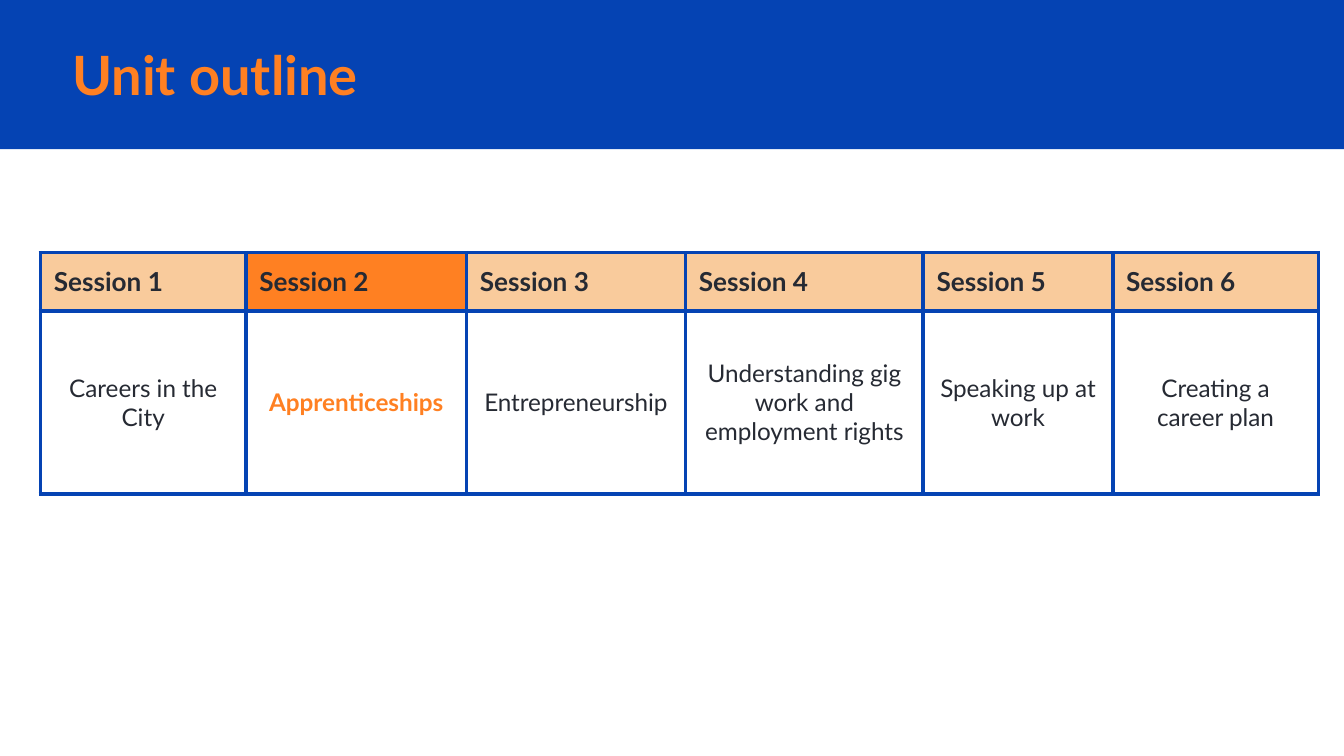
from typing import NamedTuple

from lxml import etree
from pptx import Presentation
from pptx.dml.color import RGBColor
from pptx.enum.shapes import MSO_SHAPE
from pptx.enum.text import MSO_ANCHOR, PP_ALIGN
from pptx.oxml.ns import qn
from pptx.util import Inches, Pt

RECT = MSO_SHAPE.RECTANGLE
TOP, MIDDLE = MSO_ANCHOR.TOP, MSO_ANCHOR.MIDDLE
LEFT, CENTER = PP_ALIGN.LEFT, PP_ALIGN.CENTER
WIDTH = Inches(10)
HEIGHT = WIDTH * 9 // 16
BLUE, ORANGE, PEACH, DARK, WHITE = "0543B3", "FF8022", "F9CB9C", "262A33", "FFFFFF"
INSET = Inches(0.1)
ROW_HEIGHTS = (0.43, 1.36)


class Session(NamedTuple):
    """A session column, its topic and its width in inches."""
    topic: str
    width: float
    current: bool = False


SESSIONS = (
    Session("Careers in the City", 1.53),
    Session("Apprenticeships", 1.64, current=True),
    Session("Entrepreneurship", 1.63),
    Session("Understanding gig work and employment rights", 1.77),
    Session("Speaking up at work", 1.41),
    Session("Creating a career plan", 1.53),
)


def rgb(value: str) -> RGBColor:
    """Turn a hex string into a colour."""
    return RGBColor.from_string(value)


def write(tf, text: str, *, size: float, color: str = DARK, bold: bool = False, align=LEFT) -> None:
    """Put one formatted run in a text frame."""
    tf.word_wrap = True
    p = tf.paragraphs[0]
    p.alignment = align
    r = p.add_run()
    r.text = text
    r.font.name = "Lato"
    r.font.size = Pt(size)
    r.font.bold = bold
    r.font.color.rgb = rgb(color)


def set_insets(box) -> None:
    """Give a cell or a text frame the same inset on every side."""
    box.margin_left = box.margin_right = box.margin_top = box.margin_bottom = INSET


def add_borders(cell, color: str, width: float) -> None:
    """Outline the four sides of a table cell."""
    tc_pr = cell._tc.get_or_add_tcPr()
    for side in ("lnL", "lnR", "lnT", "lnB"):
        ln = etree.SubElement(tc_pr, qn(f"a:{side}"), w=str(Pt(width)))
        fill = etree.SubElement(ln, qn("a:solidFill"))
        etree.SubElement(fill, qn("a:srgbClr"), val=color)


def fill_cell(cell, text: str, fill: str, anchor, **style) -> None:
    """Style one table cell and write its text."""
    set_insets(cell)
    cell.vertical_anchor = anchor
    add_borders(cell, BLUE, 2.25)
    cell.fill.solid()
    cell.fill.fore_color.rgb = rgb(fill)
    write(cell.text_frame, text, **style)


def add_header(s) -> None:
    """Draw the title band and the title."""
    sp = s.shapes.add_shape(RECT, 0, 0, WIDTH, Inches(1.11))
    sp.shadow.inherit = False
    sp.fill.solid()
    sp.fill.fore_color.rgb = rgb(BLUE)
    sp.line.fill.background()
    title = s.shapes.add_textbox(Inches(0.44), Inches(0.21), Inches(9.35), Inches(0.68))
    tf = title.text_frame
    set_insets(tf)
    tf.vertical_anchor = MIDDLE
    write(tf, "Unit outline", size=29, color=ORANGE, bold=True)


def add_outline(s) -> None:
    """Draw the table of sessions."""
    width = Inches(sum(session.width for session in SESSIONS))
    table = s.shapes.add_table(len(ROW_HEIGHTS), len(SESSIONS), Inches(0.3), Inches(1.88),
                               width, Inches(sum(ROW_HEIGHTS))).table
    for row, height in zip(table.rows, ROW_HEIGHTS):
        row.height = Inches(height)
    for col, session in enumerate(SESSIONS):
        table.columns[col].width = Inches(session.width)
        fill_cell(table.cell(0, col), f"Session {col + 1}", ORANGE if session.current else PEACH,
                  TOP, size=14, bold=True)
        fill_cell(table.cell(1, col), session.topic, WHITE, MIDDLE, size=13, align=CENTER,
                  color=ORANGE if session.current else DARK, bold=session.current)


def main() -> None:
    """Build the slide and save it."""
    prs = Presentation()
    prs.slide_width, prs.slide_height = WIDTH, HEIGHT
    s = prs.slides.add_slide(prs.slide_layouts[6])
    add_header(s)
    add_outline(s)
    prs.save("out.pptx")


if __name__ == "__main__":
    main()
